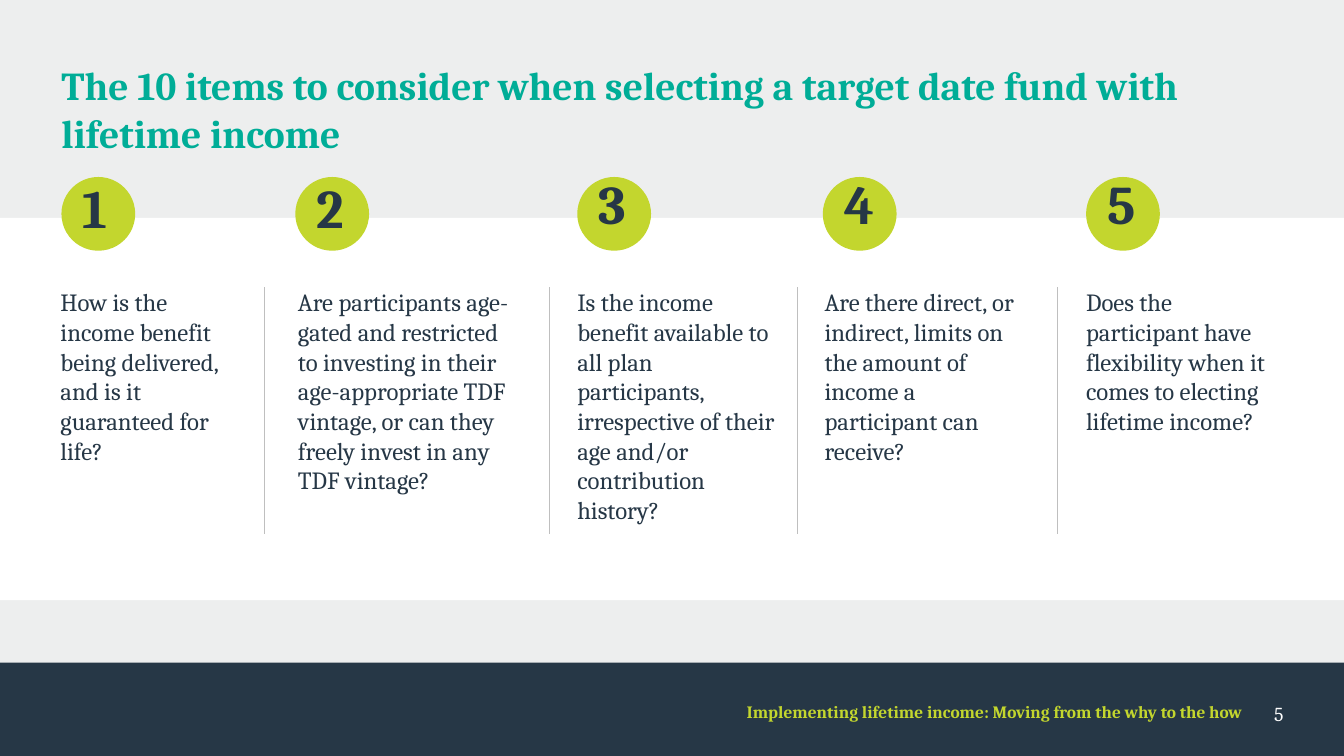
import pptx
import pptx.util
import pptx.dml.color
import pptx.enum.shapes
import pptx.enum.text
import pptx.oxml.ns
import lxml.etree

RGBColor = pptx.dml.color.RGBColor
NAVY = RGBColor(0x26, 0x37, 0x46)
TEAL = RGBColor(0x00, 0xAD, 0x97)
LIME = RGBColor(0xC3, 0xD6, 0x2E)
PALE = RGBColor(0xED, 0xEE, 0xEE)
RULE = RGBColor(0xBF, 0xBF, 0xBF)
WHITE = RGBColor(0xFF, 0xFF, 0xFF)

SHAPE = pptx.enum.shapes.MSO_SHAPE
ALIGN = pptx.enum.text.PP_ALIGN

CIRCLE_TOP, CIRCLE_W, CIRCLE_H = 23.41, 5.49, 9.76
NUMBER_INDENT = 1.6
BODY_TOP, RULE_END = 38, 70.59

ITEMS = [
    (4.57, 23.06, 4.5, 13.1, 40.94,
     "How is the income benefit being delivered, and is it guaranteed for life?"),
    (21.97, 23.06, 22.17, 16.55, 47.18,
     "Are participants age-gated and restricted to investing in their "
     "age-appropriate TDF vintage, or can they freely invest in any TDF vintage?"),
    (42.95, 22.5, 42.95, 15.35, 31.06,
     "Is the income benefit available to all plan participants, "
     "irrespective of their age and/or\ncontribution history?"),
    (61.22, 22.5, 61.35, 15.02, 27.65,
     "Are there direct, or indirect, limits on the amount of income "
     "a participant can receive?"),
    (80.81, 22.5, 80.81, 13.57, 27.65,
     "Does the participant have flexibility when it comes to electing "
     "lifetime income?"),
]
DIVIDERS = [19.66, 40.9, 59.36, 78.69]


class Deck:
    font = "Cambria"

    def __init__(self, width, height):
        self.prs = pptx.Presentation()
        self.prs.slide_width = pptx.util.Inches(width)
        self.prs.slide_height = pptx.util.Inches(height)
        self.s = self.prs.slides.add_slide(self.prs.slide_layouts[6])

    def background(self, color):
        fill = self.s.background.fill
        fill.solid()
        fill.fore_color.rgb = color

    def place(self, x, y, w, h):
        width, height = self.prs.slide_width, self.prs.slide_height
        return [round(share * size / 100) for share, size in
                zip((x, y, w, h), (width, height, width, height))]

    def shape(self, kind, x, y, w, h, color):
        sp = self.s.shapes.add_shape(kind, *self.place(x, y, w, h))
        sp.shadow.inherit = False
        sp.fill.solid()
        sp.fill.fore_color.rgb = color
        sp.line.fill.background()

    def text(self, text, x, y, w, h, size, color, bold=False,
             align=ALIGN.LEFT, after=0):
        tf = self.s.shapes.add_textbox(*self.place(x, y, w, h)).text_frame
        tf.word_wrap = True
        tf.margin_left = tf.margin_right = tf.margin_top = tf.margin_bottom = 0
        p = tf.paragraphs[0]
        p.text = text
        p.alignment = align
        p.space_after = pptx.util.Pt(after)
        for r in p.runs:
            r.font.name = self.font
            r.font.size = pptx.util.Pt(size)
            r.font.bold = bold
            r.font.color.rgb = color

    def divider(self, x, top, bottom):
        cx = self.s.shapes.add_connector(
            pptx.enum.shapes.MSO_CONNECTOR.STRAIGHT,
            *self.place(x, top, x, bottom))
        cx.line.color.rgb = RULE
        cx.line.width = pptx.util.Pt(1)
        lxml.etree.SubElement(cx._element.spPr,
                              pptx.oxml.ns.qn("a:effectLst"))


def main():
    deck = Deck(15.11, 8.5)
    deck.background(PALE)
    deck.shape(SHAPE.RECTANGLE, 0, 87.65, 100, 12.35, NAVY)
    deck.text("5", 92.85, 92.82, 2.65, 3.88, 16, WHITE, align=ALIGN.RIGHT)
    deck.text("Implementing lifetime income: Moving from the why to the how",
              37.33, 92.82, 55.13, 3.41, 14, LIME, True, ALIGN.RIGHT)
    deck.text("The 10 items to consider when selecting a target date fund "
              "with lifetime income", 4.57, 8.12, 90.93, 13.29, 32, TEAL, True)
    deck.shape(SHAPE.RECTANGLE, 0, 28.82, 100, 50.59, WHITE)
    for number, (left, number_top, body_left, body_w, body_h, question) in \
            enumerate(ITEMS, 1):
        deck.shape(SHAPE.OVAL, left, CIRCLE_TOP, CIRCLE_W, CIRCLE_H, LIME)
        deck.text(str(number), left + NUMBER_INDENT, number_top, 3.57, 10.82,
                  44, NAVY, True, after=6)
        deck.text(question, body_left, BODY_TOP, body_w, body_h, 20, NAVY)
    for x in DIVIDERS:
        deck.divider(x, BODY_TOP, RULE_END)
    deck.prs.save("out.pptx")


if __name__ == "__main__":
    main()
